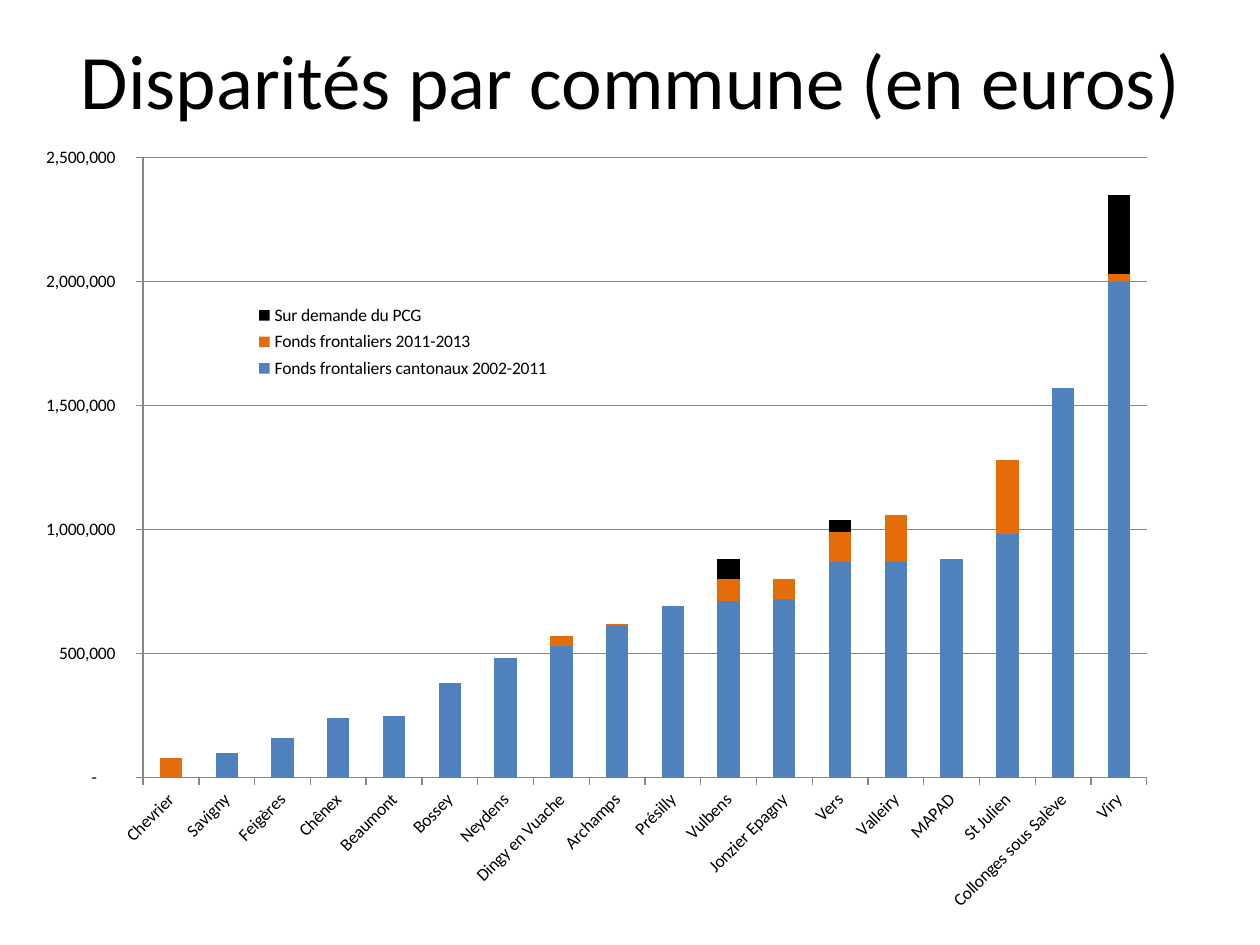
from dataclasses import dataclass

from lxml import etree
from pptx import Presentation
from pptx import util as u
from pptx.chart.data import CategoryChartData
from pptx.dml.color import RGBColor
from pptx.enum import chart as ch
from pptx.enum import text
from pptx.oxml.ns import qn

PX = u.Inches(1) // 126
SLIDE_SIZE = (1260, 945)
TITLE_BOX = (64, 0, 1134, 157)
CHART_BOX = (25, 134, 1181, 785)
PLOT_SHARE = (0.1, 0.03, 0.85, 0.79)
LEGEND_SHARE = (0.19, 0.21, 0.26, 0.11)
EURO_FORMAT = r'_-* #,##0\ _€_-;\-* #,##0\ _€_-;_-* "-"??\ _€_-;_-@_-'


@dataclass(frozen=True)
class Theme:
    font: str = "Calibri"
    title_size: int = 44
    chart_size: int = 10
    ink: str = "000000"
    axis: str = "868686"
    series: tuple = ("4F81BD", "E46C0A", "000000")


THEME = Theme()

SERIES_NAMES = (
    "Fonds frontaliers cantonaux 2002-2011",
    "Fonds frontaliers 2011-2013",
    "Sur demande du PCG",
)
# Thousands of euros, in the order of SERIES_NAMES
COMMUNES = {
    "Chevrier": (0, 80, None),
    "Savigny": (100, None, None),
    "Feigères": (160, None, None),
    "Chênex": (240, None, None),
    "Beaumont": (250, None, None),
    "Bossey": (380, None, None),
    "Neydens": (480, None, None),
    "Dingy en Vuache": (530, 40, None),
    "Archamps": (610, 10, None),
    "Présilly": (690, None, None),
    "Vulbens": (710, 90, 80),
    "Jonzier Epagny": (720, 80, None),
    "Vers": (870, 120, 50),
    "Valleiry": (870, 190, None),
    "MAPAD": (880, None, None),
    "St Julien": (980, 300, None),
    "Collonges sous Salève": (1570, None, None),
    "Viry": (2000, 30, 320),
}


def style_font(font, size):
    font.name = THEME.font
    font.size = u.Pt(size)
    font.color.rgb = RGBColor.from_string(THEME.ink)


def style_line(line):
    line.color.rgb = RGBColor.from_string(THEME.axis)
    line.width = u.Pt(0.75)


def set_layout(element, share, index, inner=False):
    """Place a chart part by shares of the chart's size; index is its child slot."""
    for old in element.findall(qn("c:layout")):
        element.remove(old)
    layout = etree.Element(qn("c:layout"))
    element.insert(index, layout)
    manual = etree.SubElement(layout, qn("c:manualLayout"))
    settings = [("layoutTarget", "inner")] if inner else []
    settings += [("xMode", "edge"), ("yMode", "edge")]
    settings += zip("xywh", share)
    for tag, value in settings:
        etree.SubElement(manual, qn(f"c:{tag}"), val=str(value))


def add_title(page, box):
    title = page.shapes.title
    title.left, title.top, title.width, title.height = (n * PX for n in box)
    frame = title.text_frame
    frame.text = "Disparités par commune (en euros)"
    frame.vertical_anchor = text.MSO_ANCHOR.MIDDLE
    para = frame.paragraphs[0]
    para.alignment = text.PP_ALIGN.CENTER
    style_font(para.font, THEME.title_size)


def style_axes(chart):
    for axis in (chart.category_axis, chart.value_axis):
        axis.major_tick_mark = ch.XL_TICK_MARK.OUTSIDE
        style_line(axis.format.line)
        style_font(axis.tick_labels.font, THEME.chart_size)
    slanted = chart.category_axis.tick_labels.font
    slanted.bold = False
    body = chart.element.find(f".//{qn('c:catAx')}/{qn('c:txPr')}/{qn('a:bodyPr')}")
    body.set("rot", "-2700000")
    values = chart.value_axis
    values.minimum_scale, values.maximum_scale = 0, 2_500_000
    values.major_unit = 500_000
    values.has_major_gridlines = True
    style_line(values.major_gridlines.format.line)
    values.tick_labels.number_format = EURO_FORMAT
    values.tick_labels.number_format_is_linked = False


def add_communes_chart(page, box):
    data = CategoryChartData()
    data.categories = list(COMMUNES)
    for name, amounts in zip(SERIES_NAMES, zip(*COMMUNES.values())):
        data.add_series(name, [None if n is None else n * 1000 for n in amounts])
    chart = page.shapes.add_chart(
        ch.XL_CHART_TYPE.COLUMN_STACKED, *(n * PX for n in box), data
    ).chart
    chart.has_title = False
    style_font(chart.font, THEME.chart_size)

    plot = chart.plots[0]
    plot.gap_width, plot.overlap = 150, 100
    plot.vary_by_categories = False
    for series, color in zip(plot.series, THEME.series):
        series.format.fill.solid()
        series.format.fill.fore_color.rgb = RGBColor.from_string(color)
    style_axes(chart)

    chart.has_legend = True
    chart.legend.position = ch.XL_LEGEND_POSITION.RIGHT
    chart.legend.include_in_layout = False
    style_font(chart.legend.font, THEME.chart_size)
    set_layout(chart.element.find(f".//{qn('c:plotArea')}"), PLOT_SHARE, 0, inner=True)
    set_layout(chart.element.find(f".//{qn('c:legend')}"), LEGEND_SHARE, 1)


def main():
    deck = Presentation()
    deck.slide_width, deck.slide_height = (n * PX for n in SLIDE_SIZE)
    page = deck.slides.add_slide(deck.slide_layouts[5])
    add_title(page, TITLE_BOX)
    add_communes_chart(page, CHART_BOX)
    deck.save("out.pptx")


if __name__ == "__main__":
    main()
